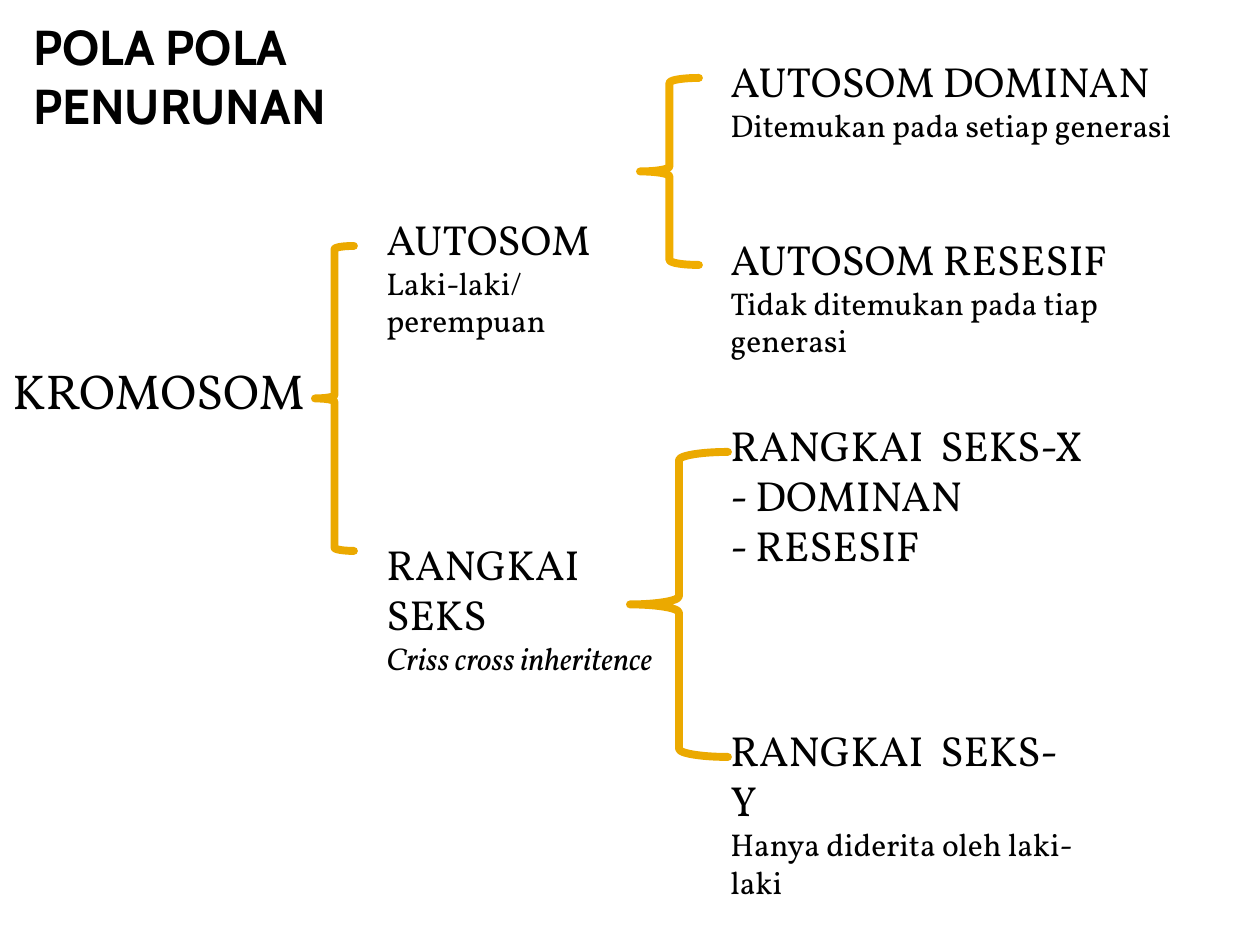
from pptx import Presentation
from pptx.dml.color import RGBColor
from pptx.enum.shapes import MSO_SHAPE
from pptx.enum.text import MSO_ANCHOR, MSO_AUTO_SIZE, PP_ALIGN
from pptx.oxml.ns import qn
from pptx.util import Pt

BRACE = MSO_SHAPE.LEFT_BRACE
GROW = MSO_AUTO_SIZE.SHAPE_TO_FIT_TEXT
TOP = MSO_ANCHOR.TOP
LEFT = PP_ALIGN.LEFT

PX = 914400 // 126
COLORS = {"text": "000000", "amber": "EBA900", "bright_amber": "F0AD00"}

prs = Presentation()
prs.slide_width = 1260 * PX
prs.slide_height = 945 * PX
slide = prs.slides.add_slide(prs.slide_layouts[6])


def add_text(box, heads, detail=None, size=24, font="Vollkorn", bold=False, italic_detail=False):
    """Place heading lines and an optional smaller detail line."""
    label = slide.shapes.add_textbox(*(n * PX for n in box))
    frame = label.text_frame
    frame.word_wrap = True
    frame.auto_size = GROW
    frame.vertical_anchor = TOP
    lines = [(head, size, False) for head in heads]
    if detail:
        lines.append((detail, 18, italic_detail))
    for i, (text, points, italic) in enumerate(lines):
        paragraph = frame.paragraphs[0] if i == 0 else frame.add_paragraph()
        paragraph.alignment = LEFT
        run = paragraph.add_run()
        run.text = text
        run.font.name = font
        run.font.size = Pt(points)
        run.font.bold = bold
        run.font.italic = italic
        run.font.color.rgb = RGBColor.from_string(COLORS["text"])


# Root of the tree
add_text((0, 354, 374, 72), ["KROMOSOM"], size=28)

# Chromosome types
type_x = 374
add_text((type_x, 207, 276, 190), ["AUTOSOM"], "Laki-laki/ perempuan")
add_text((type_x, 532, 325, 190), ["RANGKAI  SEKS"], "Criss cross inheritence",
         italic_detail=True)

# Inheritance patterns
pattern_x = 718
patterns = [
    (49, 473, 102, ["AUTOSOM DOMINAN"], "Ditemukan pada setiap generasi"),
    (227, 462, 140, ["AUTOSOM RESESIF"], "Tidak ditemukan pada tiap generasi"),
    (413, 416, 165, ["RANGKAI  SEKS-X", "- DOMINAN", "- RESESIF"], None),
    (718, 374, 140, ["RANGKAI  SEKS-Y"], "Hanya diderita oleh laki-laki"),
]
for top, width, height, heads, detail in patterns:
    add_text((pattern_x, top, width, height), heads, detail)

# Braces that open each branch
braces = [
    ((315, 246, 39, 305), "amber"),
    ((640, 78, 59, 187), "bright_amber"),
    ((630, 452, 98, 305), "amber"),
]
for box, color in braces:
    brace = slide.shapes.add_shape(BRACE, *(n * PX for n in box))
    brace.shadow.inherit = False
    brace.fill.background()
    brace.line.color.rgb = RGBColor.from_string(COLORS[color])
    brace.line.width = Pt(4.5)
    brace.element.spPr.find(qn("a:ln")).set("cap", "rnd")

# Title
add_text((21, 10, 577, 131), ["POLA POLA PENURUNAN"], size=28, font="Cabin", bold=True)

prs.save("out.pptx")
